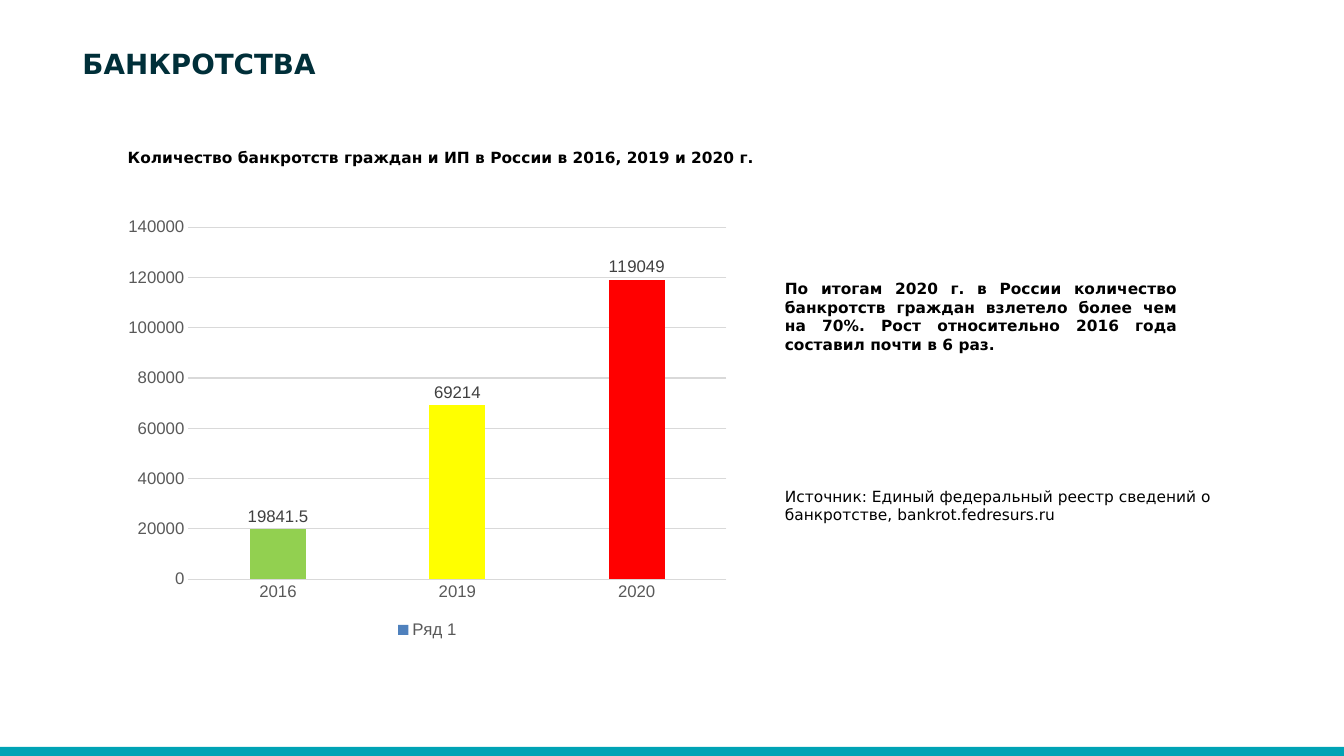
from pptx import Presentation
from pptx.chart.data import CategoryChartData
from pptx.dml.color import RGBColor
from pptx.enum.chart import XL_CHART_TYPE, XL_LABEL_POSITION, XL_LEGEND_POSITION, XL_TICK_MARK
from pptx.enum.shapes import MSO_SHAPE
from pptx.enum.text import MSO_AUTO_SIZE, PP_ALIGN
from pptx.util import Cm, Pt

COLUMNS = XL_CHART_TYPE.COLUMN_CLUSTERED
OUTSIDE = XL_LABEL_POSITION.OUTSIDE_END
BOTTOM = XL_LEGEND_POSITION.BOTTOM
NO_TICK = XL_TICK_MARK.NONE
RECTANGLE = MSO_SHAPE.RECTANGLE
GROW = MSO_AUTO_SIZE.SHAPE_TO_FIT_TEXT
LEFT, JUSTIFY = PP_ALIGN.LEFT, PP_ALIGN.JUSTIFY

BLACK = RGBColor(0x00, 0x00, 0x00)
NAVY = RGBColor(0x00, 0x2F, 0x39)
TEAL = RGBColor(0x00, 0xA3, 0xB5)
AXIS_GREY = RGBColor(0x59, 0x59, 0x59)
LABEL_GREY = RGBColor(0x40, 0x40, 0x40)
GRID_GREY = RGBColor(0xD9, 0xD9, 0xD9)
BLUE = RGBColor(0x4F, 0x81, 0xBD)
GREEN = RGBColor(0x92, 0xD0, 0x50)
YELLOW = RGBColor(0xFF, 0xFF, 0x00)
RED = RGBColor(0xFF, 0x00, 0x00)

WIDTH, HEIGHT = 33.87, 19.05
BAR_HEIGHT = 0.23
SIDE_LEFT = 19.53


class SlideBuilder:
    text_font = "DejaVu Sans"
    chart_font = "Arial"

    def __init__(self, page):
        self.page = page

    def style(self, font, color, **values):
        font.color.rgb = color
        for name, value in values.items():
            setattr(font, name, value)

    def text(self, place, words, size=11, color=BLACK, bold=True, align=LEFT, **frame_values):
        box = self.page.shapes.add_textbox(*map(Cm, place))
        frame = box.text_frame
        for name, value in {"word_wrap": True, **frame_values}.items():
            setattr(frame, name, value)
        para = frame.paragraphs[0]
        para.alignment = align
        span = para.add_run()
        span.text = words
        self.style(span.font, color, size=Pt(size), bold=bold, name=self.text_font)

    def bar(self, place, color):
        shape = self.page.shapes.add_shape(RECTANGLE, *map(Cm, place))
        shape.shadow.inherit = False
        shape.fill.solid()
        shape.fill.fore_color.rgb = color
        shape.line.fill.background()

    def grey_line(self, line):
        line.color.rgb = GRID_GREY
        line.width = Pt(0.75)

    def column_chart(self, place, series_name, columns):
        data = CategoryChartData()
        data.categories = [year for year, _, _ in columns]
        data.add_series(series_name, [count for _, count, _ in columns])
        chart = self.page.shapes.add_chart(COLUMNS, *map(Cm, place), data).chart
        chart.has_title = False
        self.style(chart.font, BLACK, size=Pt(10), name=self.chart_font)
        small = {"size": Pt(12), "name": self.chart_font}

        # Axes and grid
        years, counts = chart.category_axis, chart.value_axis
        for axis in (years, counts):
            axis.major_tick_mark = axis.minor_tick_mark = NO_TICK
            self.style(axis.tick_labels.font, AXIS_GREY, **small)
        self.grey_line(years.format.line)
        counts.format.line.fill.background()
        self.grey_line(counts.major_gridlines.format.line)

        # Legend
        chart.has_legend = True
        chart.legend.position = BOTTOM
        chart.legend.include_in_layout = False
        self.style(chart.legend.font, AXIS_GREY, **small)

        # Columns and their labels
        plot = chart.plots[0]
        plot.vary_by_categories = False
        plot.gap_width, plot.overlap = 219, -27
        series = plot.series[0]
        fills = [series.format.fill]
        fills += [series.points[i].format.fill for i in range(len(columns))]
        for fill, color in zip(fills, [BLUE] + [color for _, _, color in columns]):
            fill.solid()
            fill.fore_color.rgb = color
        labels = series.data_labels
        labels.show_value = True
        labels.position = OUTSIDE
        self.style(labels.font, LABEL_GREY, **small)


def main():
    deck = Presentation()
    deck.slide_width, deck.slide_height = Cm(WIDTH), Cm(HEIGHT)
    builder = SlideBuilder(deck.slides.add_slide(deck.slide_layouts[6]))

    # Title and bottom bar
    builder.text((1.83, 0.97, 24.92, 0.84), "БАНКРОТСТВА", size=19.8, color=NAVY,
                 margin_top=Cm(0.2), margin_bottom=0)
    builder.bar((0, HEIGHT - BAR_HEIGHT, WIDTH, BAR_HEIGHT), TEAL)

    # Chart with its heading
    builder.column_chart((2.92, 5.28, 15.7, 10.92), "Ряд 1", [
        ("2016", 19841.5, GREEN),
        ("2019", 69214, YELLOW),
        ("2020", 119049, RED),
    ])
    builder.text((2.97, 3.61, 16.94, 0.74),
                 "Количество банкротств граждан и ИП в Росcии в 2016, 2019 и 2020 г.",
                 auto_size=GROW)

    # Finding and source
    builder.text((SIDE_LEFT, 6.91, 10.39, 2.13),
                 "По итогам 2020 г. в России количество банкротств граждан взлетело "
                 "более чем на 70%. Рост относительно 2016 года составил почти в 6 раз.",
                 align=JUSTIFY, auto_size=GROW)
    builder.text((SIDE_LEFT, 12.14, 11.61, 1.19),
                 "Источник: Единый федеральный реестр сведений о банкротстве, "
                 "bankrot.fedresurs.ru",
                 bold=False, auto_size=GROW)

    deck.save("out.pptx")


if __name__ == "__main__":
    main()
